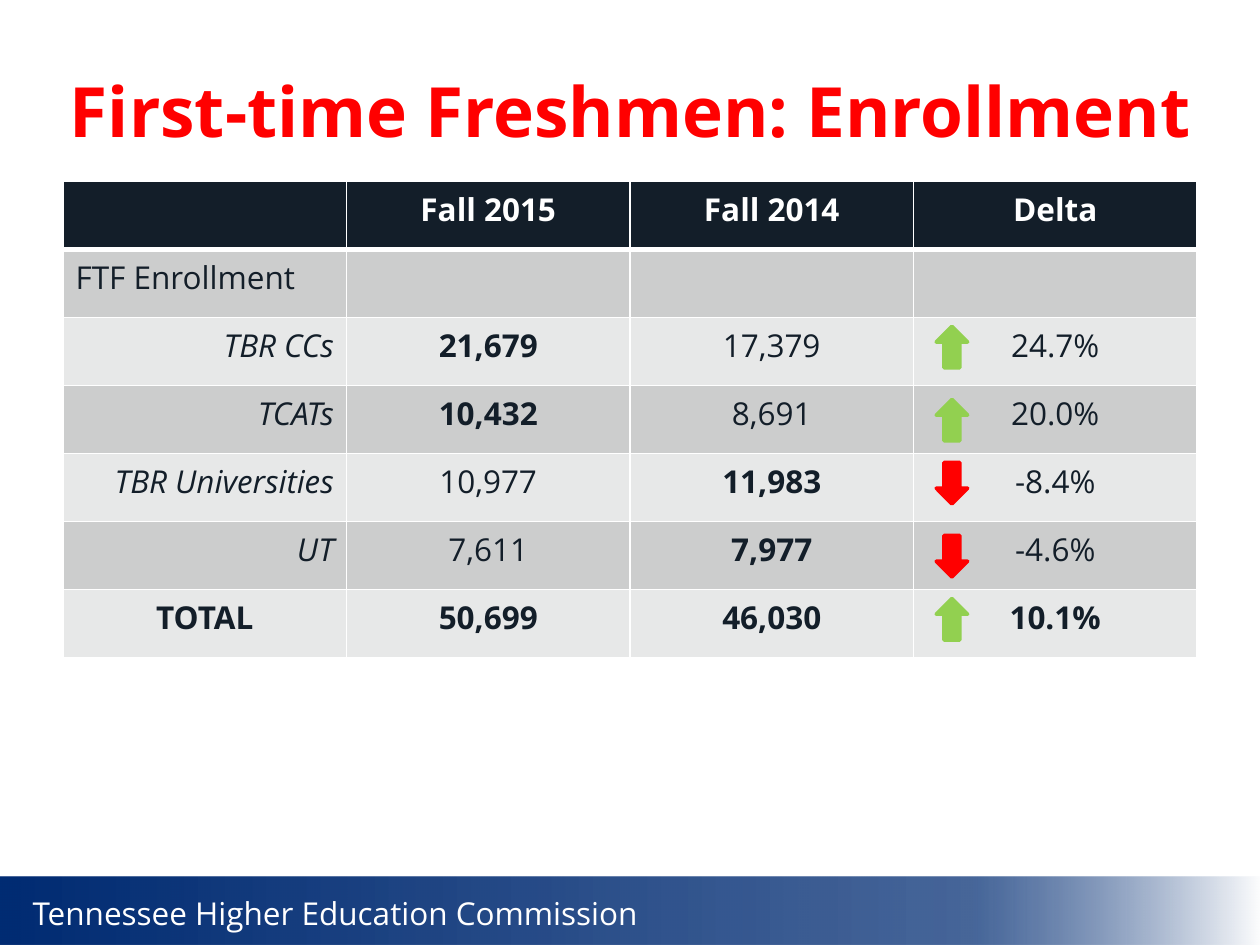
from copy import deepcopy

from lxml.etree import SubElement
from pptx import Presentation
from pptx.dml.color import RGBColor
from pptx.enum.shapes import MSO_SHAPE
from pptx.enum.text import MSO_ANCHOR, PP_ALIGN
from pptx.oxml import parse_xml
from pptx.oxml.ns import nsdecls, qn
from pptx.util import Inches, Pt

NAVY, INK, WHITE = "002C73", "131E29", "FFFFFF"
RED, GREEN = "FF0000", "92D050"
BANDS = ["CCCDCD", "E7E8E8"]


def color(hex_code):
    return RGBColor.from_string(hex_code)


def add_text(paragraph, words, size, hex_code, bold=False, italic=False):
    run = paragraph.add_run()
    run.text = words
    run.font.name = "Open Sans"
    run.font.size = Pt(size)
    run.font.bold = bold
    run.font.italic = italic
    run.font.color.rgb = color(hex_code)


prs = Presentation()
prs.slide_width, prs.slide_height = Inches(10), Inches(7.5)
slide = prs.slides.add_slide(prs.slide_layouts[5])

# Footer band, fading to white on the right
band = slide.shapes.add_shape(
    MSO_SHAPE.RECTANGLE, 0, Inches(6.96), Inches(10.02), Inches(0.54))
band.shadow.inherit = False
band.line.fill.background()
band.fill.gradient()
band.fill.gradient_angle = 0
stop_list = band._element.spPr.find(qn("a:gradFill")).find(qn("a:gsLst"))
stop_list.append(deepcopy(stop_list[-1]))
for stop, (position, hex_code) in zip(
        band.fill.gradient_stops, [(0, NAVY), (0.77, NAVY), (1, WHITE)]):
    stop.position = position
    stop.color.rgb = color(hex_code)
SubElement(stop_list[1][0], qn("a:alpha")).set("val", "72000")

agency = slide.shapes.add_textbox(
    Inches(0.16), Inches(7.05), Inches(5.05), Inches(0.4))
agency.text_frame.word_wrap = False
add_text(agency.text_frame.paragraphs[0],
         "Tennessee Higher Education Commission", 18, WHITE)

title = slide.shapes.title
title.left, title.top = Inches(0.38), Inches(0.25)
title.width, title.height = Inches(9.25), Inches(1.25)
title.text_frame.vertical_anchor = MSO_ANCHOR.MIDDLE
heading = title.text_frame.paragraphs[0]
heading.alignment = PP_ALIGN.CENTER
add_text(heading, "First-time Freshmen: Enrollment", 39.6, RED, bold=True)

# Enrollment table: the larger of the two years is bold
rows = [
    ("", "Fall 2015", "Fall 2014", "Delta"),
    ("FTF Enrollment", "", "", ""),
    ("TBR CCs", "21,679", "17,379", "24.7%"),
    ("TCATs", "10,432", "8,691", "20.0%"),
    ("TBR Universities", "10,977", "11,983", "-8.4%"),
    ("UT", "7,611", "7,977", "-4.6%"),
    ("TOTAL", "50,699", "46,030", "10.1%"),
]
LEFT, TOP, COL, ROW = 0.5, 1.44, 2.25, 0.54
HEADER, SECTION, TOTAL = 0, 1, len(rows) - 1
table = slide.shapes.add_table(
    len(rows), 4, Inches(LEFT), Inches(TOP),
    Inches(4 * COL), Inches(len(rows) * ROW)).table

for r, values in enumerate(rows):
    table.rows[r].height = Inches(ROW)
    for c, words in enumerate(values):
        cell = table.cell(r, c)
        cell.fill.solid()
        cell.fill.fore_color.rgb = color(
            INK if r == HEADER else BANDS[(r - 1) % 2])

        widths = {"lnL": 1, "lnR": 1,
                  "lnT": 3 if r == SECTION else 1,
                  "lnB": 3 if r == HEADER else 1}
        for place, (side, width) in enumerate(widths.items()):
            cell._tc.get_or_add_tcPr().insert(place, parse_xml(
                f'<a:{side} {nsdecls("a")} w="{Pt(width)}"><a:solidFill>'
                f'<a:srgbClr val="{WHITE}"/></a:solidFill></a:{side}>'))

        if not words:
            continue
        paragraph = cell.text_frame.paragraphs[0]
        group_name = c == 0 and SECTION < r < TOTAL
        if group_name:
            paragraph.alignment = PP_ALIGN.RIGHT
        elif r == SECTION:
            paragraph.alignment = PP_ALIGN.LEFT
        else:
            paragraph.alignment = PP_ALIGN.CENTER
        rising = not values[3].startswith("-")
        larger_year = r > SECTION and c == (1 if rising else 2)
        add_text(paragraph, words, 18, WHITE if r == HEADER else INK,
                 bold=r in (HEADER, TOTAL) or larger_year, italic=group_name)

# Trend arrows beside the deltas, slightly lower in the darker rows
for r in range(SECTION + 1, len(rows)):
    falling = rows[r][3].startswith("-")
    trend = slide.shapes.add_shape(
        MSO_SHAPE.DOWN_ARROW if falling else MSO_SHAPE.UP_ARROW,
        Inches(LEFT + 3 * COL + 0.18),
        Inches(TOP + r * ROW + (0.11 if r % 2 else 0.07)),
        Inches(0.25), Inches(0.33))
    trend.shadow.inherit = False
    trend.fill.solid()
    trend.fill.fore_color.rgb = color(RED if falling else GREEN)
    trend.line.color.rgb = color(RED if falling else GREEN)
    trend.line.width = Pt(2)

prs.save("out.pptx")
